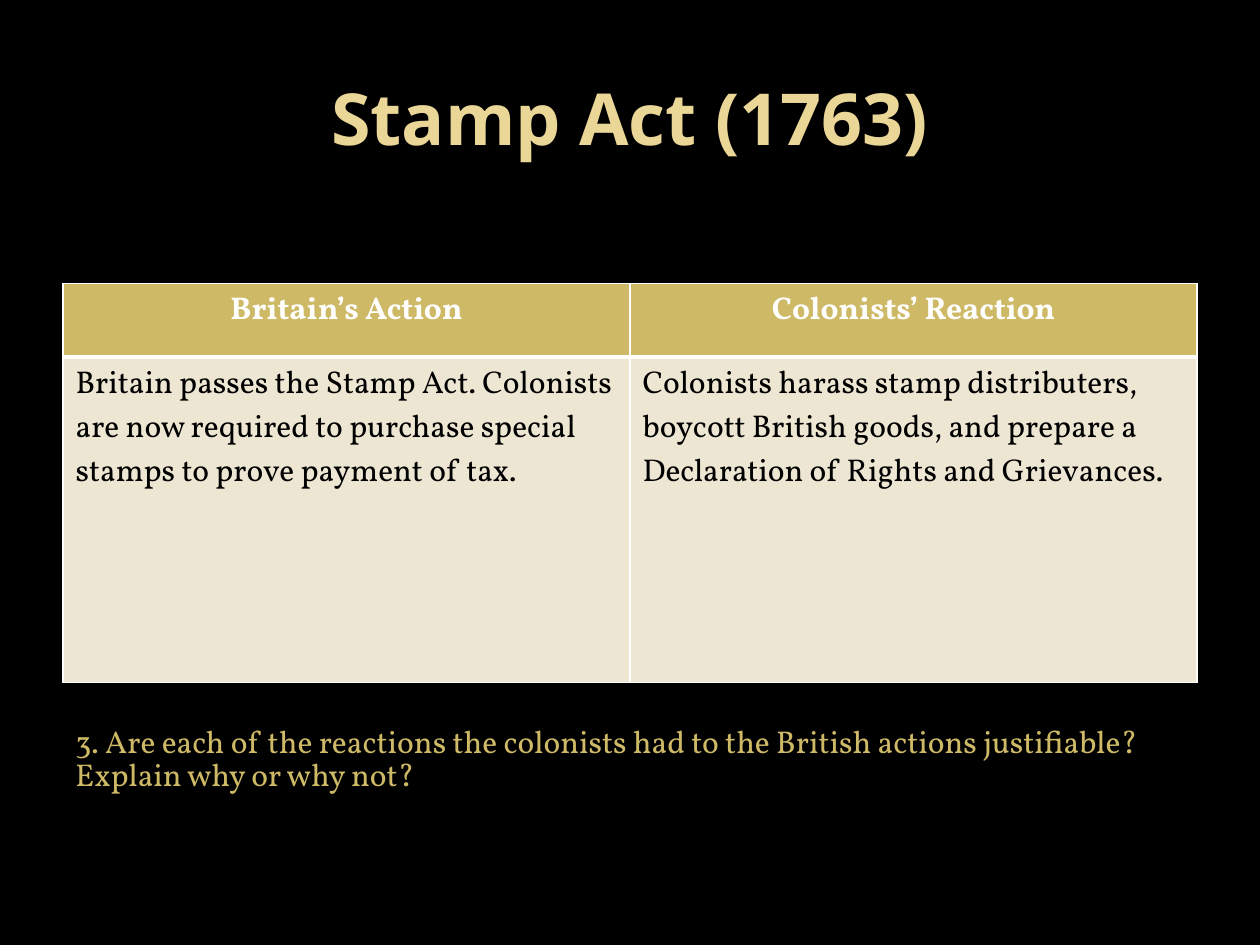
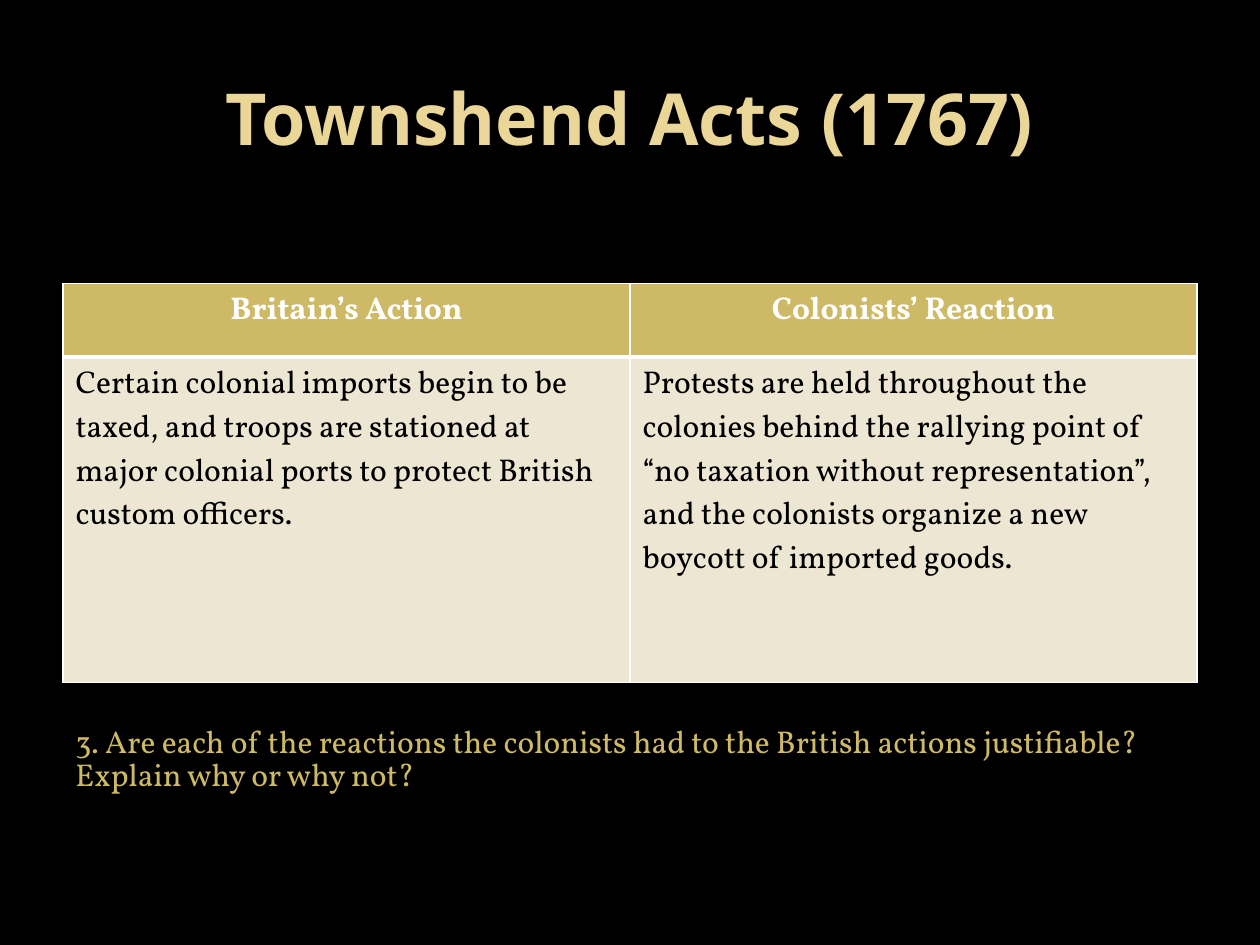
from lxml import etree
from pptx import Presentation
from pptx.dml.color import RGBColor
from pptx.enum.text import MSO_ANCHOR, PP_ALIGN
from pptx.oxml.ns import qn
from pptx.util import Pt

CENTER, LEFT = PP_ALIGN.CENTER, PP_ALIGN.LEFT
MIDDLE, TOP = MSO_ANCHOR.MIDDLE, MSO_ANCHOR.TOP

COLORS = {
    "background": "000000",
    "title": "EAD696",
    "gold": "CEB966",
    "cream": "EDE6D3",
    "white": "FFFFFF",
    "black": "000000",
}
TITLE_FONT, BODY_FONT = "Open Sans", "Vollkorn"
MARGIN, CONTENT_WIDTH = 36, 648
TABLE_TOP, HEADER_HEIGHT, BODY_HEIGHT = 162, 42, 186
THIN, THICK = 1, 3

HEADINGS = ("Britain’s Action", "Colonists’ Reaction")
QUESTION = (
    "3. Are each of the reactions the colonists had to the British actions "
    "justifiable? Explain why or why not?"
)
ACTS = [
    (
        "Stamp Act (1763)",
        "Britain passes the Stamp Act. Colonists are now required to purchase "
        "special stamps to prove payment of tax.",
        "Colonists harass stamp distributers, boycott British goods, and prepare "
        "a Declaration of Rights and Grievances.",
    ),
    (
        "Townshend Acts (1767)",
        "Certain colonial imports begin to be taxed, and troops are stationed at "
        "major colonial ports to protect British custom officers.",
        "Protests are held throughout the colonies behind the rallying point of "
        "“no taxation without representation”, and the colonists organize a new "
        "boycott of imported goods.",
    ),
]


def rgb(name):
    """Return the named colour."""
    return RGBColor.from_string(COLORS[name])


def write(frame, text, color, size=18, font=BODY_FONT, bold=False, align=LEFT):
    """Put one formatted paragraph in a text frame and return it."""
    frame.text = text
    frame.word_wrap = True
    paragraph = frame.paragraphs[0]
    paragraph.alignment = align
    for run in paragraph.runs:
        run.font.name = font
        run.font.size = Pt(size)
        run.font.bold = bold
        run.font.color.rgb = rgb(color)
    return paragraph


def add_title(slide, text):
    """Add the centred slide title."""
    title = slide.shapes.add_textbox(Pt(MARGIN), Pt(21.6), Pt(CONTENT_WIDTH), Pt(90))
    write(title.text_frame, text, "title", 41, TITLE_FONT, True, CENTER)
    title.text_frame.vertical_anchor = MIDDLE


def add_question(slide, text):
    """Add the tightly spaced discussion question below the table."""
    question = slide.shapes.add_textbox(Pt(MARGIN), Pt(408), Pt(CONTENT_WIDTH), Pt(51))
    frame = question.text_frame
    write(frame, text, "gold").line_spacing = 0.87
    frame.vertical_anchor = TOP
    frame.margin_top, frame.margin_bottom = Pt(7.5), Pt(0)


def set_borders(cell, top, bottom):
    """Draw white cell borders with the given top and bottom widths."""
    properties = cell._tc.get_or_add_tcPr()
    widths = {"a:lnL": THIN, "a:lnR": THIN, "a:lnT": top, "a:lnB": bottom}
    for position, (tag, width) in enumerate(widths.items()):
        line = etree.Element(qn(tag), w=str(Pt(width)))
        fill = etree.SubElement(line, qn("a:solidFill"))
        etree.SubElement(fill, qn("a:srgbClr"), val=COLORS["white"])
        properties.insert(position, line)


def fill_cell(cell, text, fill, color, top, bottom, **style):
    """Set the text, fill and borders of a table cell."""
    write(cell.text_frame, text, color, **style)
    cell.fill.solid()
    cell.fill.fore_color.rgb = rgb(fill)
    set_borders(cell, top, bottom)


def add_action_table(slide, action, reaction):
    """Add the table that sets an action beside its reaction."""
    table = slide.shapes.add_table(
        2, 2, Pt(MARGIN), Pt(TABLE_TOP), Pt(CONTENT_WIDTH),
        Pt(HEADER_HEIGHT + BODY_HEIGHT),
    ).table
    table.rows[0].height = Pt(HEADER_HEIGHT)
    table.rows[1].height = Pt(BODY_HEIGHT)
    for column, (heading, event) in enumerate(zip(HEADINGS, (action, reaction))):
        fill_cell(table.cell(0, column), heading, "gold", "white", THIN, THICK,
                  bold=True, align=CENTER)
        fill_cell(table.cell(1, column), event, "cream", "black", THICK, THIN)


def main():
    """Build one slide for each act."""
    presentation = Presentation()
    presentation.slide_width, presentation.slide_height = Pt(720), Pt(540)
    blank = presentation.slide_layouts[6]
    for name, action, reaction in ACTS:
        slide = presentation.slides.add_slide(blank)
        slide.background.fill.solid()
        slide.background.fill.fore_color.rgb = rgb("background")
        add_title(slide, name)
        add_action_table(slide, action, reaction)
        add_question(slide, QUESTION)
    presentation.save("out.pptx")


if __name__ == "__main__":
    main()
